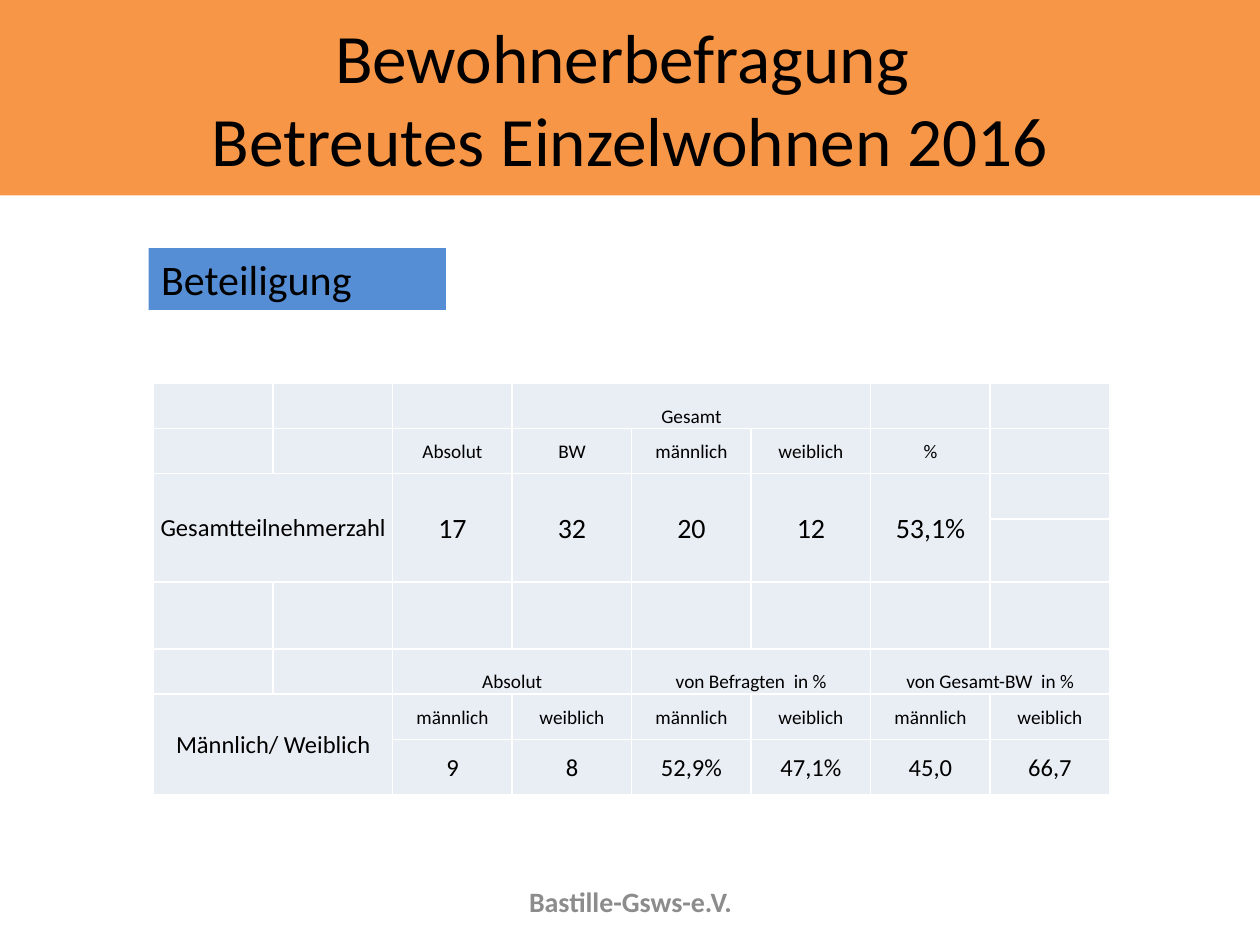
from lxml import etree
from pptx import Presentation
from pptx.dml.color import RGBColor
from pptx.enum import shapes, text
from pptx.oxml import ns
from pptx.util import Inches, Pt

COLORS = {"title": "F79646", "label": "558ED5", "cell": "E9EDF4",
          "border": "FFFFFF", "text": "000000", "footer": "8C8C8C"}
CENTER, LEFT = text.PP_ALIGN.CENTER, text.PP_ALIGN.LEFT
MIDDLE, BOTTOM = text.MSO_ANCHOR.MIDDLE, text.MSO_ANCHOR.BOTTOM


def write(frame, wording, size, align=CENTER, color="text", bold=False):
    frame.text = wording
    for para in frame.paragraphs:
        para.alignment = align
        for span in para.runs:
            span.font.name = "Calibri"
            span.font.size = Pt(size)
            span.font.bold = bold
            span.font.color.rgb = RGBColor.from_string(COLORS[color])


def add_borders(cell):
    properties = cell._tc.get_or_add_tcPr()
    for side in ("lnL", "lnR", "lnT", "lnB"):
        line = etree.SubElement(properties, ns.qn(f"a:{side}"), w=str(Pt(1)))
        fill = etree.SubElement(line, ns.qn("a:solidFill"))
        etree.SubElement(fill, ns.qn("a:srgbClr"), val=COLORS["border"])


deck = Presentation()
deck.slide_width, deck.slide_height = Inches(10), Inches(7.5)
page = deck.slides.add_slide(deck.slide_layouts[6])

# Title band and section label
bands = [
    ("title", (0, 0, 10, 1.55), "Bewohnerbefragung \vBetreutes Einzelwohnen 2016", 39.6, CENTER),
    ("label", (1.18, 1.97, 2.36, 0.49), "Beteiligung", 24, LEFT),
]
for color, place, wording, size, align in bands:
    band = page.shapes.add_shape(shapes.MSO_SHAPE.RECTANGLE, *map(Inches, place))
    band.shadow.inherit = False
    band.fill.solid()
    band.fill.fore_color.rgb = RGBColor.from_string(COLORS[color])
    band.line.fill.background()
    band.text_frame.vertical_anchor = MIDDLE
    write(band.text_frame, wording, size, align)

# Participation table
row_heights = [0.36, 0.36, 0.36, 0.5, 0.53, 0.36, 0.36, 0.44]
column_count = 8
table = page.shapes.add_table(len(row_heights), column_count, Inches(1.22), Inches(3.04),
                              Inches(7.59), Inches(sum(row_heights))).table
table.first_row = table.horz_banding = False
for row, height in zip(table.rows, row_heights):
    row.height = Inches(height)

for cell in table.iter_cells():
    add_borders(cell)
    cell.fill.solid()
    cell.fill.fore_color.rgb = RGBColor.from_string(COLORS["cell"])
    cell.margin_left = cell.margin_right = cell.margin_top = Inches(0.01)
    cell.margin_bottom = 0
    cell.vertical_anchor = MIDDLE

# Each entry: row, first column, rows and columns per cell, size, anchor, wordings
entries = [
    (0, 3, 1, 3, 11, BOTTOM, ["Gesamt"]),
    (1, 2, 1, 1, 11, MIDDLE, ["Absolut", "BW", "männlich", "weiblich", "%"]),
    (2, 0, 2, 2, 14, MIDDLE, ["Gesamtteilnehmerzahl"]),
    (2, 2, 2, 1, 16, MIDDLE, ["17", "32", "20", "12", "53,1%"]),
    (5, 2, 1, 2, 11, BOTTOM, ["Absolut", "von Befragten  in %", "von Gesamt-BW  in %"]),
    (6, 0, 2, 2, 14, MIDDLE, ["Männlich/ Weiblich"]),
    (6, 2, 1, 1, 11, MIDDLE, ["männlich", "weiblich"] * 3),
    (7, 2, 1, 1, 14, MIDDLE, ["9", "8", "52,9%", "47,1%", "45,0", "66,7"]),
]
for row, first, down, across, size, anchor, wordings in entries:
    for index, wording in enumerate(wordings):
        column = first + index * across
        cell = table.cell(row, column)
        if down * across > 1:
            cell.merge(table.cell(row + down - 1, column + across - 1))
        cell.vertical_anchor = anchor
        write(cell.text_frame, wording, size)

# Footer
footer = page.shapes.add_textbox(Inches(3.42), Inches(6.95), Inches(3.17), Inches(0.4))
footer.text_frame.word_wrap = True
footer.text_frame.vertical_anchor = MIDDLE
write(footer.text_frame, "Bastille-Gsws-e.V.", 16, color="footer", bold=True)

deck.save("out.pptx")
